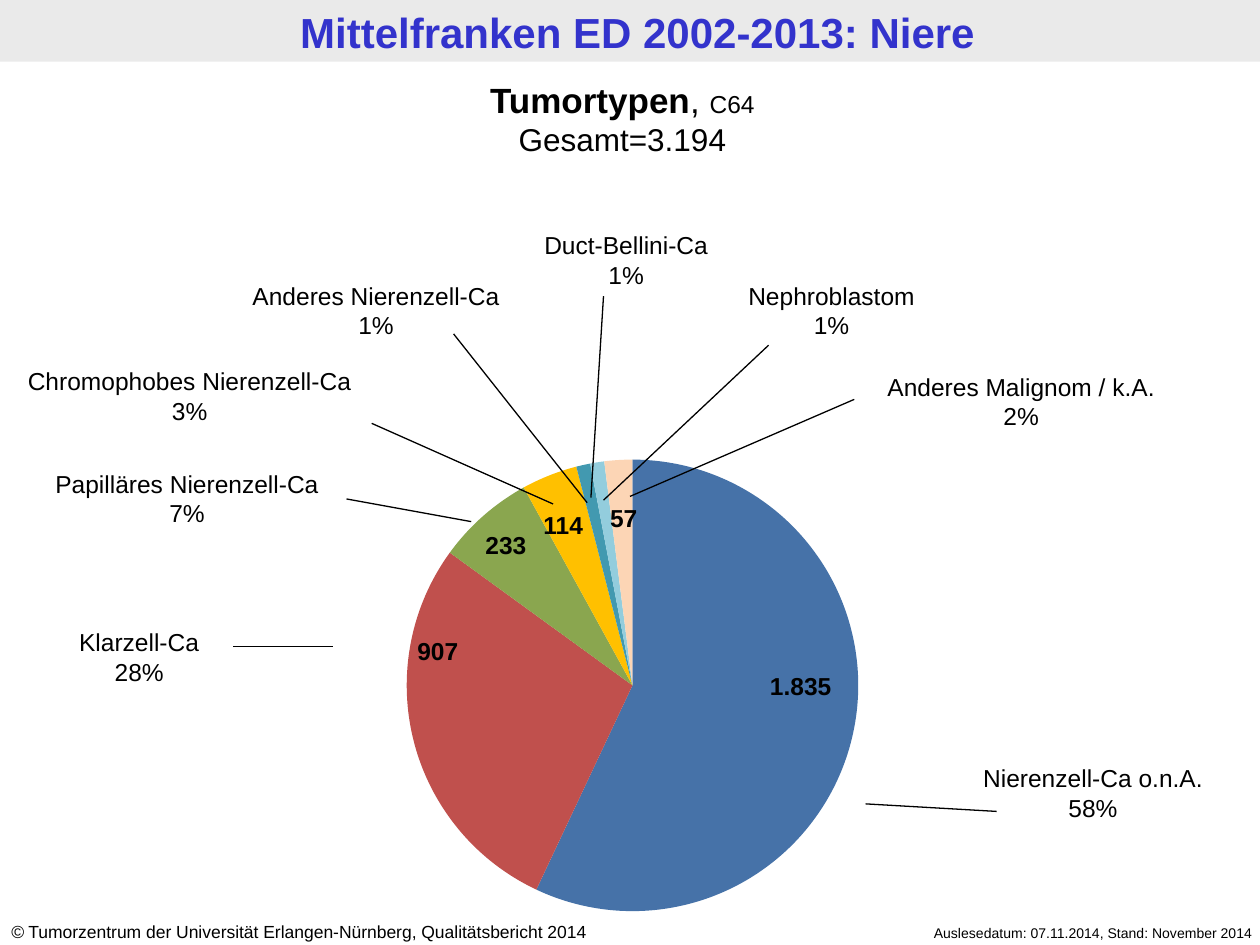
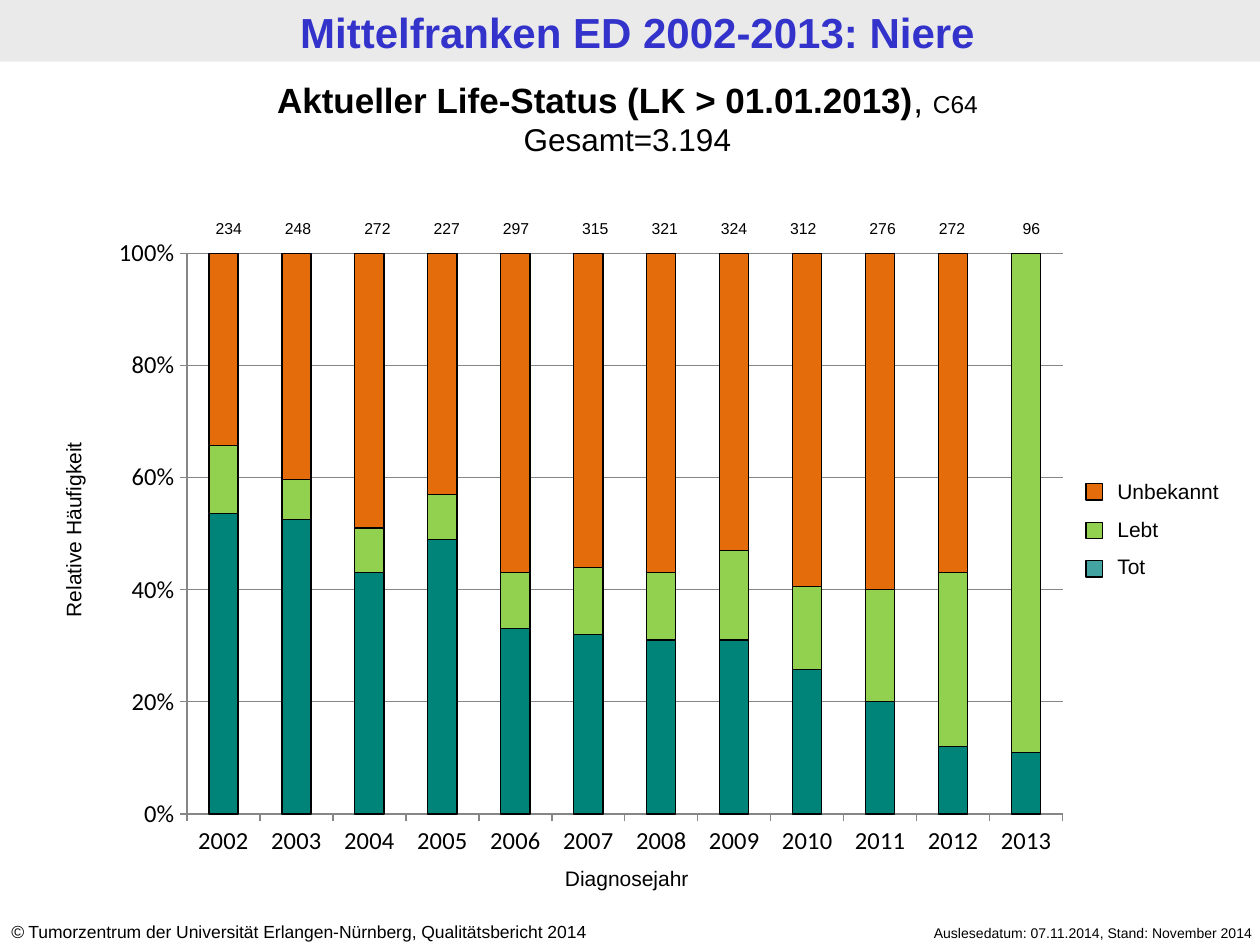
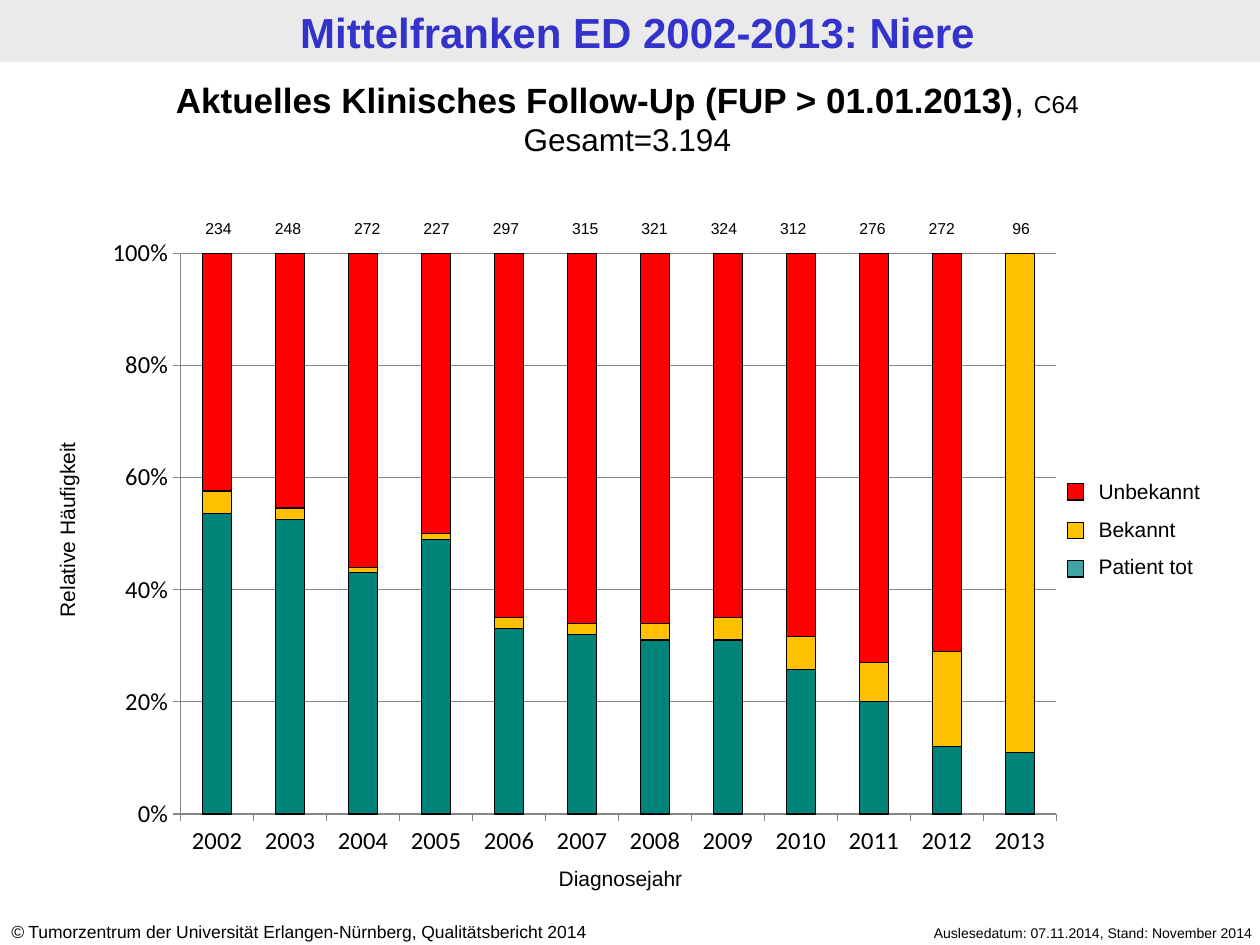
from dataclasses import dataclass

from lxml import etree
from pptx import Presentation
from pptx.chart.data import CategoryChartData
from pptx.dml.color import RGBColor
from pptx.enum.chart import XL_CHART_TYPE, XL_TICK_MARK
from pptx.enum.shapes import MSO_CONNECTOR, MSO_SHAPE
from pptx.enum.text import MSO_ANCHOR, MSO_AUTO_SIZE, PP_ALIGN
from pptx.oxml.ns import qn
from pptx.util import Inches, Pt

PIE = XL_CHART_TYPE.PIE
STACKED_100 = XL_CHART_TYPE.COLUMN_STACKED_100
TICK_OUT = XL_TICK_MARK.OUTSIDE
TICK_NONE = XL_TICK_MARK.NONE
STRAIGHT = MSO_CONNECTOR.STRAIGHT
RECTANGLE = MSO_SHAPE.RECTANGLE
TOP = MSO_ANCHOR.TOP
MIDDLE = MSO_ANCHOR.MIDDLE
GROW = MSO_AUTO_SIZE.SHAPE_TO_FIT_TEXT
LEFT = PP_ALIGN.LEFT
CENTER = PP_ALIGN.CENTER
RIGHT = PP_ALIGN.RIGHT


@dataclass(frozen=True)
class Theme:
    """Colours, fonts and type sizes of the deck."""
    font: str = "Arial"
    chart_font: str = "Calibri"
    text: str = "000000"
    band: str = "EAEAEA"
    header: str = "3333CC"
    axis: str = "868686"
    dead: str = "008378"
    dead_key: str = "008380"
    alive: str = "92D050"
    known: str = "FFC000"
    unknown_status: str = "E46C0A"
    unknown_follow_up: str = "FF0000"
    header_size: float = 24
    title_size: float = 20
    total_size: float = 18
    label_size: float = 14
    axis_size: float = 12
    source_size: float = 10
    count_size: float = 9
    date_size: float = 8
    line_width: float = 0.75


@dataclass(frozen=True)
class Box:
    """A rectangle in inches."""
    left: float
    top: float
    width: float
    height: float

    def inside(self, x, y, width=0, height=0):
        """Return a box offset from this box's corner."""
        return Box(self.left + x, self.top + y, width, height)

    def emu(self):
        """Return position and size as lengths."""
        return [Inches(v) for v in (self.left, self.top, self.width, self.height)]


THEME = Theme()
YEARS = [str(year) for year in range(2002, 2014)]
YEAR_COUNTS = [234, 248, 272, 227, 297, 315, 321, 324, 312, 276, 272, 96]
COUNT_OFFSETS = [0, 0.55, 1.18, 1.73, 2.28, 2.91, 3.46, 4.01, 4.56, 5.19, 5.74, 6.37]
DEAD_SHARES = [53, 52, 43, 49, 33, 32, 31, 31, 26, 20, 12, 11]

TUMOUR_SHARES = [57, 28, 7, 4, 1, 0, 1, 2]
SLICE_COLORS = {1: "C0504D", 3: "FFC000", 6: "93CDDD", 7: "FCD5B5"}
SLICE_COUNTS = [
    ("907", 3.06, 3.5, 0.83),
    ("1.835", 5.94, 3.78, 0.83),
    ("114", 4.21, 2.5, 0.52),
    ("233", 3.74, 2.66, 0.55),
    ("57", 4.74, 2.44, 0.42),
]
CALLOUTS = [
    ("Nierenzell-Ca o.n.A.", "58%", (7.57, 4.51, 2.21), (6.87, 4.88), (7.91, 4.94)),
    ("Klarzell-Ca", "28%", (0.12, 3.43, 1.97), (2.64, 3.63), (1.85, 3.63)),
    ("Papilläres Nierenzell-Ca", "7%", (-0.04, 2.17, 3.05), (3.74, 2.64), (2.75, 2.46)),
    ("Chromophobes Nierenzell-Ca", "3%", (-0.02, 1.36, 3.05), (4.39, 2.5), (2.95, 1.86)),
    ("Anderes Nierenzell-Ca", "1%", (1.46, 0.68, 3.05), (4.66, 2.49), (3.6, 1.15)),
    ("Duct-Bellini-Ca", "1%", (3.92, 0.28, 2.1), (4.69, 2.45), (4.79, 0.85)),
    ("Nephroblastom", "1%", (5.55, 0.68, 2.1), (4.79, 2.47), (6.1, 1.24)),
    ("Anderes Malignom / k.A.", "2%", (6.65, 1.4, 2.91), (5, 2.44), (6.78, 1.67)),
]


def rgb(value):
    """Turn a hex string into a colour."""
    return RGBColor.from_string(value)


def write(frame, lines, size=THEME.label_size, color=THEME.text, bold=False,
          italic=False, align=CENTER, gap=0, anchor=TOP, insets=(0.1, 0.05)):
    """Fill a frame with lines, each a string or a list of (text, overrides)."""
    frame.word_wrap = True
    frame.auto_size = GROW
    frame.vertical_anchor = anchor
    frame.margin_left = frame.margin_right = Inches(insets[0])
    frame.margin_top = frame.margin_bottom = Inches(insets[1])
    for index, line in enumerate(lines):
        paragraph = frame.add_paragraph() if index else frame.paragraphs[0]
        paragraph.alignment = align
        if index and gap:
            paragraph.space_before = Pt(gap)
        for text, changes in [(line, {})] if isinstance(line, str) else line:
            look = {"size": size, "bold": bold, "italic": italic, **changes}
            run = paragraph.add_run()
            run.text = text
            run.font.name = THEME.font
            run.font.size = Pt(look["size"])
            run.font.bold = look["bold"]
            run.font.italic = look["italic"]
            run.font.color.rgb = rgb(color)


def add_text(slide, box, *lines, **look):
    """Add a text box and return it."""
    label = slide.shapes.add_textbox(*box.emu())
    write(label.text_frame, lines, **look)
    return label


def add_rectangle(slide, box, fill, outline=None, opacity=None):
    """Add a flat rectangle and return it."""
    rectangle = slide.shapes.add_shape(RECTANGLE, *box.emu())
    rectangle.shadow.inherit = False
    rectangle.fill.solid()
    rectangle.fill.fore_color.rgb = rgb(fill)
    if opacity:
        color = rectangle.element.spPr.find(qn("a:solidFill")).find(qn("a:srgbClr"))
        etree.SubElement(color, qn("a:alpha"), val=str(opacity * 1000))
    if outline:
        rectangle.line.color.rgb = rgb(outline)
        rectangle.line.width = Pt(THEME.line_width)
    else:
        rectangle.line.fill.background()
    return rectangle


def add_leader(slide, start, end):
    """Draw a thin line between two points."""
    leader = slide.shapes.add_connector(
        STRAIGHT, Inches(start.left), Inches(start.top), Inches(end.left), Inches(end.top))
    leader.line.color.rgb = rgb(THEME.text)
    leader.line.width = Pt(THEME.line_width)
    etree.SubElement(leader.element.spPr, qn("a:effectLst"))


def add_frame(slide, page):
    """Put the header band and footers on the layout of the slide."""
    layout = slide.slide_layout
    for placeholder in list(layout.placeholders):
        if placeholder.placeholder_format.idx:
            placeholder.element.getparent().remove(placeholder.element)
    parts = [
        add_rectangle(slide, page.inside(0, 0, page.width, 0.49), THEME.band),
        add_text(slide, page.inside(0.06, 0.01, page.width, 0.49),
                 "Mittelfranken ED 2002-2013: Niere", size=THEME.header_size,
                 color=THEME.header, bold=True, anchor=MIDDLE, insets=(0.09, 0.04)),
        add_text(slide, page.inside(6.65, 7.29, 3.39, 0.24),
                 "Auslesedatum: 07.11.2014, Stand: November 2014",
                 size=THEME.date_size, align=RIGHT),
        add_text(slide, page.inside(-0.01, 7.26, 5.24, 0.27),
                 [("©", {"italic": True}),
                  (" Tumorzentrum der Universität Erlangen-Nürnberg, Qualitätsbericht 2014", {})],
                 size=THEME.source_size, align=LEFT),
    ]
    for part in parts:
        layout.shapes.element.append(part.element)


def set_title(slide, box, topic):
    """Write topic, diagnosis code and total into the title placeholder."""
    title = slide.shapes.title
    title.left, title.top, title.width, title.height = box.emu()
    write(title.text_frame, [
        [(topic, {"bold": True}), (", ", {}), ("C64", {"size": THEME.label_size})],
        [("Gesamt=3.194", {"size": THEME.total_size})],
    ], size=THEME.title_size)


def add_chart(slide, box, kind, categories, series):
    """Add a chart without title or legend and return it."""
    data = CategoryChartData()
    data.categories = categories
    for name, values in series:
        data.add_series(name, values)
    chart = slide.shapes.add_chart(kind, *box.emu(), data).chart
    chart.has_title = False
    chart.has_legend = False
    chart.font.name = THEME.chart_font
    chart.font.size = Pt(THEME.total_size)
    chart.font.color.rgb = rgb(THEME.text)
    return chart


def set_plot_area(chart, **fractions):
    """Fix the inner plot area as fractions of the chart."""
    plot_area = chart.element.find(qn("c:chart")).find(qn("c:plotArea"))
    for old in plot_area.findall(qn("c:layout")):
        plot_area.remove(old)
    layout = etree.Element(qn("c:layout"))
    manual = etree.SubElement(layout, qn("c:manualLayout"))
    settings = {"layoutTarget": "inner", "xMode": "edge", "yMode": "edge", **fractions}
    for tag, value in settings.items():
        etree.SubElement(manual, qn(f"c:{tag}"), val=str(value))
    plot_area.insert(0, layout)


def add_tumour_types(slide, box):
    """Draw the pie of tumour types with counts and callouts."""
    chart = add_chart(slide, box.inside(2.4, 2.01, 5.24, 3.86), PIE,
                      [str(number) for number in range(1, 9)],
                      [("Tumortypen", TUMOUR_SHARES)])
    pie = chart.plots[0]
    pie.vary_by_categories = True
    for index, color in SLICE_COLORS.items():
        fill = pie.series[0].points[index].format.fill
        fill.solid()
        fill.fore_color.rgb = rgb(color)
    for count, x, y, width in SLICE_COUNTS:
        add_text(slide, box.inside(x, y, width, 0.34), count, bold=True)
    for name, share, (x, y, width), start, end in CALLOUTS:
        add_leader(slide, box.inside(*start), box.inside(*end))
        add_text(slide, box.inside(x, y, width, 0.57), name, share)


def style_axis(axis):
    """Give an axis grey lines, outer ticks and its label size."""
    axis.major_tick_mark = TICK_OUT
    axis.minor_tick_mark = TICK_NONE
    axis.tick_labels.font.size = Pt(THEME.label_size)
    axis.format.line.color.rgb = rgb(THEME.axis)
    axis.format.line.width = Pt(THEME.line_width)


def add_yearly_shares(slide, box, groups):
    """Draw the stacked columns per year with their axis titles."""
    chart = add_chart(slide, box, STACKED_100, YEARS,
                      [(name, values) for name, values, _ in groups])
    set_plot_area(chart, x=0.089, y=0.043, w=0.891, h=0.871)
    columns = chart.plots[0]
    columns.vary_by_categories = False
    columns.gap_width = 150
    columns.overlap = 100
    for series, (_, _, color) in zip(columns.series, groups):
        series.format.fill.solid()
        series.format.fill.fore_color.rgb = rgb(color)
        series.format.line.color.rgb = rgb(THEME.text)
        series.format.line.width = Pt(THEME.line_width)
    style_axis(chart.category_axis)
    shares = chart.value_axis
    style_axis(shares)
    shares.major_unit = 0.2
    shares.tick_labels.number_format = "0%"
    shares.tick_labels.number_format_is_linked = False
    shares.has_major_gridlines = True
    shares.major_gridlines.format.line.color.rgb = rgb(THEME.axis)
    shares.major_gridlines.format.line.width = Pt(THEME.line_width)

    look = {"size": THEME.axis_size, "insets": (0.11, 0.05)}
    frequency = add_text(slide, box.inside(-1.41, 2.26, 2.41, 0.31),
                         "Relative Häufigkeit", **look)
    frequency.rotation = 270
    add_text(slide, box.inside(3.06, 5.03, 2.25, 0.31), "Diagnosejahr", **look)


def add_year_counts(slide, box):
    """Write the number of cases above each column."""
    for count, offset in zip(YEAR_COUNTS, COUNT_OFFSETS):
        add_text(slide, box.inside(offset, 0, 0.55, box.height), str(count),
                 size=THEME.count_size)


def add_legend(slide, box, groups):
    """Write the group names, top of the stack first, beside colour keys."""
    names = [name for name, _, _ in reversed(groups)]
    add_text(slide, box, *names, size=THEME.axis_size, align=LEFT, gap=7)
    for row, (_, _, color) in enumerate(reversed(groups)):
        is_dead = color == THEME.dead
        add_rectangle(slide, box.inside(-0.15, 0.09 + 0.305 * row, 0.13, 0.13),
                      THEME.dead_key if is_dead else color, THEME.text,
                      74 if is_dead else None)


def main():
    """Build the three slides and save them."""
    deck = Presentation()
    deck.slide_width = Inches(10)
    deck.slide_height = Inches(7.5)
    page = Box(0, 0, 10, 7.5)
    layout = deck.slide_layouts[5]

    types = deck.slides.add_slide(layout)
    add_frame(types, page)
    set_title(types, page.inside(0, 0.57, 9.88, 0.74), "Tumortypen")
    add_tumour_types(types, page.inside(0, 1.5, 10, 5.87))

    dead = DEAD_SHARES
    life_status = [
        ("Tot", dead, THEME.dead),
        ("Lebt", [12, 7, 8, 8, 10, 12, 12, 16, 15, 20, 31, 89], THEME.alive),
        ("Unbekannt", [34, 40, 49, 43, 57, 56, 57, 53, 60, 60, 57, 0], THEME.unknown_status),
    ]
    follow_up = [
        ("Patient tot", dead, THEME.dead),
        ("Bekannt", [4, 2, 1, 1, 2, 2, 3, 4, 6, 7, 17, 89], THEME.known),
        ("Unbekannt", [42, 45, 56, 50, 65, 66, 66, 65, 69, 73, 71, None],
         THEME.unknown_follow_up),
    ]
    yearly = [
        ("Aktueller Life-Status (LK > 01.01.2013)", life_status, 0.79, 1.54, 8.77, 1.23),
        ("Aktuelles Klinisches Follow-Up (FUP > 01.01.2013)", follow_up, 0.74, 1.46, 8.62, 1.42),
    ]
    for topic, groups, chart_left, counts_left, legend_left, legend_width in yearly:
        slide = deck.slides.add_slide(layout)
        set_title(slide, page.inside(-0.04, 0.57, 10.04, 0.74), topic)
        add_yearly_shares(slide, page.inside(chart_left, 1.79, 7.8, 5.11), groups)
        add_year_counts(slide, page.inside(counts_left, 1.69, 6.92, 0.25))
        add_legend(slide, page.inside(legend_left, 3.75, legend_width, 0.91), groups)

    deck.save("out.pptx")


if __name__ == "__main__":
    main()
